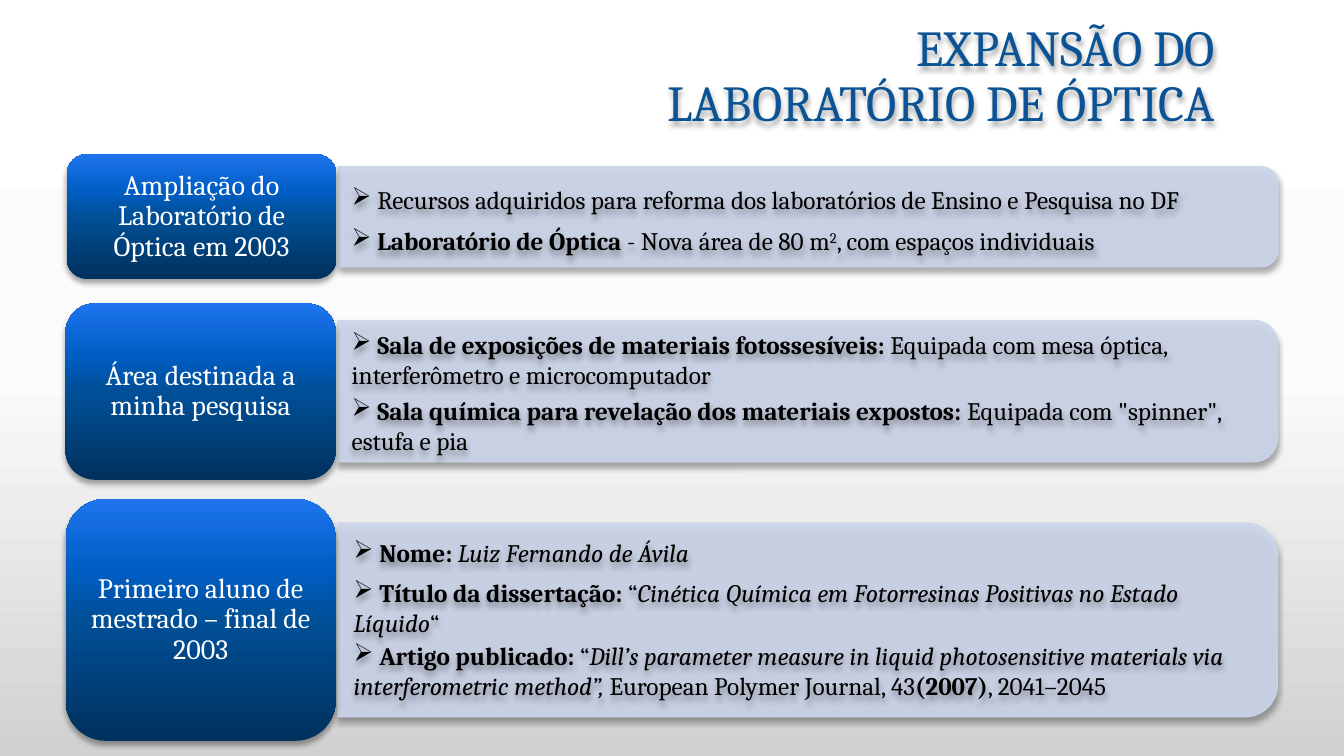
from lxml.etree import SubElement
from pptx import Presentation
from pptx.dml.color import RGBColor
from pptx.enum.shapes import MSO_SHAPE
from pptx.enum.text import MSO_ANCHOR, MSO_AUTO_SIZE, PP_ALIGN
from pptx.oxml.ns import qn
from pptx.util import Emu, Pt

PX = 9144  # 100 px to the inch
FONT = "Cambria"
TITLE, PANEL, WHITE, BLACK = "0B5394", "CCD5EA", "FFFFFF", "000000"
PAGE_STOPS = [(0, WHITE), (50, "FBFBFB"), (100, "D1D1D1")]
CARD_STOPS = [(0, "00315D"), (50, "004F97"), (70, "005DC3"), (100, "1E74EE")]
CARD_W, PANEL_W, NOTE_W = 268, 932, 898
BOLD, ITALIC, SUPER = "b", "i", "super"

# Card left, top, height; panel height; label; notes as (left, top, height, runs)
ROWS = [
    (66, 153, 124, 99, "Ampliação do Laboratório de Óptica em 2003", [
        (339, 178, 40, [
            (" Recursos adquiridos para reforma dos laboratórios de "
             "Ensino e Pesquisa no DF", "")]),
        (339, 219, 40, [
            (" Laboratório de Óptica ", BOLD), ("- Nova área de 80 m", ""),
            ("2", SUPER), (", com espaços individuais", "")]),
    ]),
    (65, 301, 175, 140, "Área destinada a minha pesquisa", [
        (339, 322, 71, [
            (" Sala de exposições de materiais fotossesíveis: ", BOLD),
            ("Equipada com mesa óptica, interferômetro e microcomputador", "")]),
        (339, 387, 71, [
            (" Sala química para revelação dos materiais expostos: ", BOLD),
            ('Equipada com "spinner", estufa e pia', "")]),
    ]),
    (65, 495, 240, 192, "Primeiro aluno de mestrado – final de 2003", [
        (341, 528, 40, [(" Nome: ", BOLD), ("Luiz Fernando de Ávila", ITALIC)]),
        (341, 568, 71, [
            (" Título da dissertação: ", BOLD), ("“", ""),
            ("Cinética Química em Fotorresinas Positivas no Estado Líquido",
             ITALIC),
            ("“", "")]),
        (341, 630, 71, [
            (" Artigo publicado:", BOLD), (" “", ""),
            ("Dill’s parameter measure in liquid photosensitive materials via "
             "interferometric method”, ", ITALIC),
            ("European Polymer Journal, 43", ""), ("(2007)", BOLD),
            (", 2041–2045", "")]),
    ]),
]


def color(value):
    return RGBColor.from_string(value)


def box(*lengths):
    return [Emu(n * PX) for n in lengths]


def set_gradient(fill, element, stops, angle):
    """Fill with any number of stops; angle runs counter-clockwise."""
    fill.gradient()
    fill.gradient_angle = angle
    gs_list = element.find(".//" + qn("a:gsLst"))
    for gs in list(gs_list):
        gs_list.remove(gs)
    for position, value in stops:
        gs = SubElement(gs_list, qn("a:gs"), pos=str(position * 1000))
        SubElement(gs, qn("a:srgbClr"), val=value)


def add_shadow(sp):
    """Drop a soft shadow straight down; call after fill and line are set."""
    sp.shadow.inherit = False
    effects = sp.element.spPr.find(qn("a:effectLst"))
    shadow = SubElement(effects, qn("a:outerShdw"), blurRad=str(Pt(4)),
                        dist=str(Pt(3)), dir="5400000", rotWithShape="0")
    clr = SubElement(shadow, qn("a:srgbClr"), val=BLACK)
    SubElement(clr, qn("a:alpha"), val="35000")


def write(sp, runs, size=18, rgb=BLACK, align=PP_ALIGN.LEFT, spacing=None,
          anchor=MSO_ANCHOR.TOP, insets=(10, 5), bullet=None):
    tf = sp.text_frame
    tf.word_wrap = True
    tf.vertical_anchor = anchor
    tf.margin_left = tf.margin_right = Emu(insets[0] * PX)
    tf.margin_top = tf.margin_bottom = Emu(insets[1] * PX)
    p = tf.paragraphs[0]
    p.alignment = align
    if spacing:
        p.line_spacing = spacing
    if bullet:
        SubElement(p._p.get_or_add_pPr(), qn("a:buChar"), char=bullet)
    for text, style in runs:
        r = p.add_run()
        r.text = text
        r.font.name = FONT
        r.font.size = Pt(size)
        r.font.color.rgb = color(rgb)
        r.font.bold = style == BOLD
        r.font.italic = style == ITALIC
        if style == SUPER:
            r.font._element.set("baseline", "30000")


def add_title(s, text):
    sp = s.shapes.add_textbox(*box(611, 15, 604, 124))
    write(sp, [(text, "")], size=36, rgb=TITLE, align=PP_ALIGN.RIGHT,
          spacing=0.9, anchor=MSO_ANCHOR.MIDDLE)
    add_shadow(sp)


def add_panel(s, left, middle, height):
    """Turn a top-rounded rectangle so that its right side is rounded."""
    x = left + (PANEL_W - height) // 2
    sp = s.shapes.add_shape(MSO_SHAPE.ROUND_2_SAME_RECTANGLE,
                            *box(x, middle - PANEL_W // 2, height, PANEL_W))
    sp.rotation = 90
    sp.fill.solid()
    sp.fill.fore_color.rgb = color(PANEL)
    sp.line.color.rgb = color(PANEL)
    sp.line.width = Pt(1)
    for clr in sp.element.spPr.iter(qn("a:srgbClr")):
        SubElement(clr, qn("a:alpha"), val="90000")
    add_shadow(sp)


def add_card(s, left, top, height, label):
    sp = s.shapes.add_shape(MSO_SHAPE.ROUNDED_RECTANGLE,
                            *box(left, top, CARD_W, height))
    set_gradient(sp.fill, sp.element, CARD_STOPS, 90)
    sp.line.fill.background()
    add_shadow(sp)
    write(sp, [(label, "")], size=20, rgb=WHITE, align=PP_ALIGN.CENTER,
          spacing=0.9, anchor=MSO_ANCHOR.MIDDLE, insets=(8, 4))


def add_note(s, left, top, height, runs):
    sp = s.shapes.add_textbox(*box(left, top, NOTE_W, height))
    write(sp, runs, bullet="➢")
    sp.text_frame.auto_size = MSO_AUTO_SIZE.SHAPE_TO_FIT_TEXT
    add_shadow(sp)


def main():
    prs = Presentation()
    prs.slide_width, prs.slide_height = box(1333, 750)
    s = prs.slides.add_slide(prs.slide_layouts[6])
    set_gradient(s.background.fill, s.element, PAGE_STOPS, 270)
    add_title(s, "EXPANSÃO DO LABORATÓRIO DE ÓPTICA")
    for left, top, height, panel_height, label, notes in ROWS:
        add_panel(s, left + CARD_W + 2, top + height // 2, panel_height)
        add_card(s, left, top, height, label)
        for note in notes:
            add_note(s, *note)
    prs.save("out.pptx")


if __name__ == "__main__":
    main()
